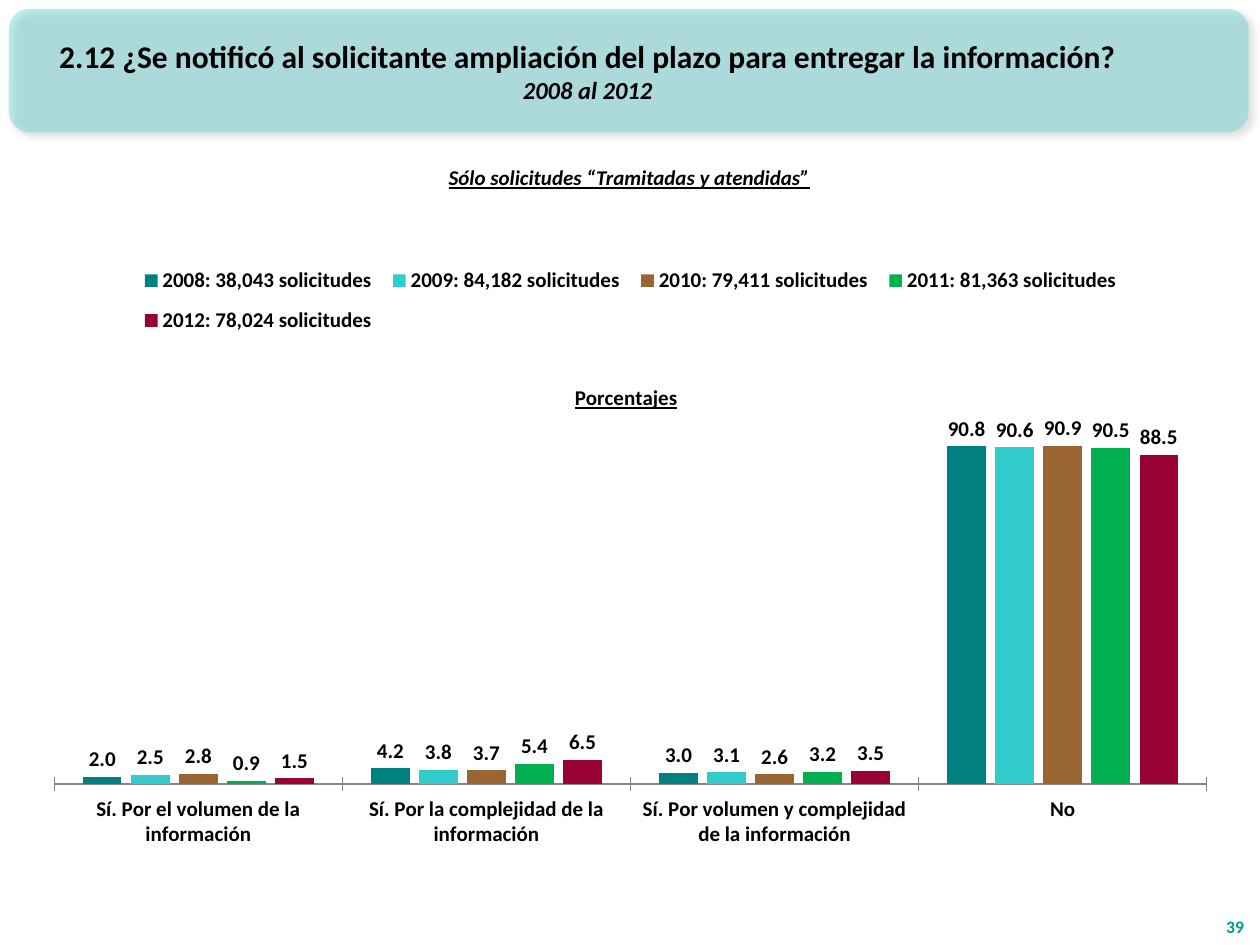
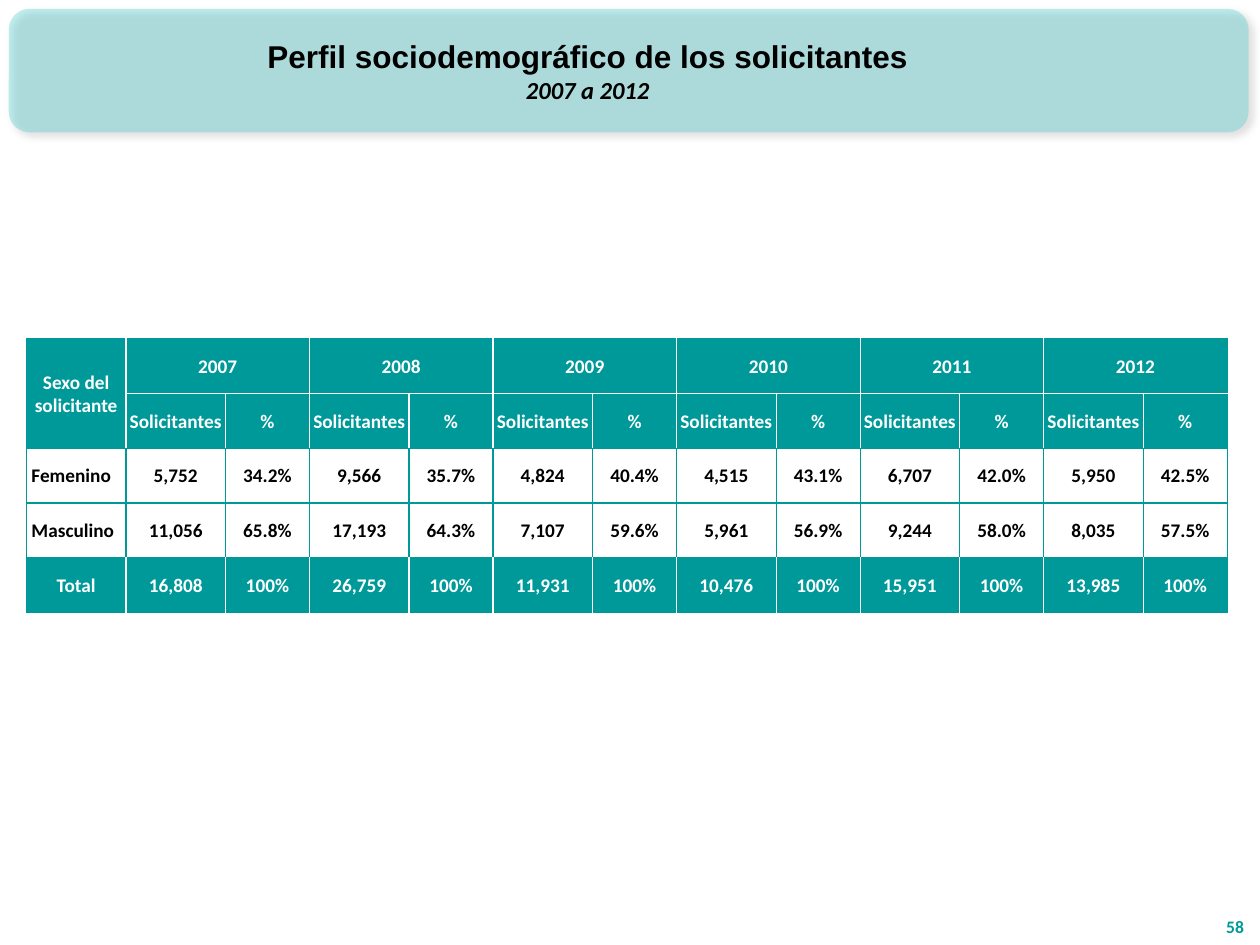
from dataclasses import dataclass
from pptx import Presentation as Deck
from pptx.chart.data import CategoryChartData as Data
from pptx.dml.color import RGBColor as Color
from pptx.enum.chart import XL_CHART_TYPE as Kind, XL_LABEL_POSITION as Spot
from pptx.enum.chart import XL_LEGEND_POSITION as Side, XL_TICK_LABEL_POSITION as Label
from pptx.enum.chart import XL_TICK_MARK as Tick
from pptx.enum.shapes import MSO_SHAPE as Shape
from pptx.enum.text import MSO_ANCHOR as Anchor, MSO_AUTO_SIZE as Fit, PP_ALIGN as Align
from pptx.oxml import parse_xml as make
from pptx.oxml.ns import nsdecls, qn
from pptx.util import Inches, Pt


@dataclass(frozen=True)
class Theme:
    font: str = "Calibri"
    plain: str = "Arial"
    ink: str = "000000"
    white: str = "FFFFFF"
    teal: str = "009999"
    band: str = "33CCCC"
    gray: str = "868686"
    bars: tuple = ("008080", "33CCCC", "996633", "00B050", "990033")
    head: int = 18
    sub: int = 14
    note: int = 12
    cell: int = 11
    foot: int = 10
    rule: float = 0.75


LOOK = Theme()
COLS, ROWS = 100, 75
WIDE, HIGH = Inches(10), Inches(7.5)


def across(n):
    return round(n * WIDE / COLS)


def down(n):
    return round(n * HIGH / ROWS)


def area(x, y, w, h):
    return across(x), down(y), across(w), down(h)


def place(item, index, inner=False, **parts):
    for old in item.findall(qn("c:layout")):
        item.remove(old)
    target = '<c:layoutTarget val="inner"/>' if inner else ""
    modes = "".join(f'<c:{key}Mode val="edge"/>' for key in parts if key in "xy")
    sizes = "".join(f'<c:{key} val="{val}"/>' for key, val in parts.items())
    item.insert(index, make(
        f'<c:layout {nsdecls("c")}><c:manualLayout>{target}{modes}{sizes}'
        '</c:manualLayout></c:layout>'))


class Page:
    def __init__(self, deck, look):
        self.deck, self.look = deck, look
        self.slide = None

    def start(self, title, years, number, face=None):
        self.slide = self.deck.slides.add_slide(self.deck.slide_layouts[5])
        self.band()
        self.title(title, years, face or self.look.font)
        self.text(str(number), (95.7, 70.9, 4, 4), self.look.foot,
                  self.look.teal, Align.RIGHT, Anchor.BOTTOM)

    def style(self, par, size, color=None, align=Align.CENTER, face=None, **marks):
        par.alignment = align
        for run in par.runs:
            font = run.font
            font.name, font.size, font.bold = face or self.look.font, Pt(size), True
            font.color.rgb = Color.from_string(color or self.look.ink)
            for mark, value in marks.items():
                setattr(font, mark, value)

    def band(self):
        band = self.slide.shapes.add_shape(Shape.ROUNDED_RECTANGLE, *area(0.7, 0.7, 98.4, 9.8))
        band.shadow.inherit = False
        band.line.fill.background()
        band.fill.solid()
        band.fill.fore_color.rgb = Color.from_string(self.look.band)
        props = band.element.spPr
        tint = props.find(qn("a:solidFill"))[0]
        tint.append(make(f'<a:alpha {nsdecls("a")} val="30000"/>'))
        props.find(qn("a:effectLst")).append(make(
            f'<a:outerShdw {nsdecls("a")} blurRad="{Pt(4)}" dist="{Pt(3)}" dir="2700000" '
            f'algn="tl" rotWithShape="0"><a:srgbClr val="{self.look.ink}">'
            '<a:alpha val="40000"/></a:srgbClr></a:outerShdw>'))
        self.slide.shapes.element.insert(2, band.element)

    def title(self, title, years, face):
        box = self.slide.shapes.title
        box.left, box.top, box.width, box.height = area(0.8, 0.9, 91.7, 9.4)
        frame = box.text_frame
        frame.text = f"{title}\n{years}"
        frame.auto_size, frame.vertical_anchor = Fit.NONE, Anchor.MIDDLE
        self.style(frame.paragraphs[0], self.look.head, face=face)
        self.style(frame.paragraphs[1], self.look.sub, italic=True)

    def text(self, words, spot, size, color=None, align=Align.CENTER,
             anchor=Anchor.TOP, **marks):
        frame = self.slide.shapes.add_textbox(*area(*spot)).text_frame
        frame.word_wrap, frame.vertical_anchor = True, anchor
        frame.text = words
        self.style(frame.paragraphs[0], size, color, align, **marks)

    def chart(self, title, groups, series, spot):
        data = Data(number_format="0.0")
        data.categories = groups
        for name, values in series.items():
            data.add_series(name, values)
        chart = self.slide.shapes.add_chart(Kind.COLUMN_CLUSTERED, *area(*spot), data).chart
        font = chart.font
        font.name, font.size, font.bold = self.look.font, Pt(self.look.note), True
        font.color.rgb = Color.from_string(self.look.ink)

        chart.has_title = True
        chart.chart_title.text_frame.text = title
        self.style(chart.chart_title.text_frame.paragraphs[0], self.look.note, underline=True)
        chart.has_legend = True
        chart.legend.position = Side.TOP
        chart.legend.include_in_layout = False

        plot = chart.plots[0]
        plot.gap_width, plot.overlap, plot.vary_by_categories = 150, -25, False
        plot.has_data_labels = True
        labels = plot.data_labels
        labels.show_value, labels.position = True, Spot.OUTSIDE_END
        labels.number_format, labels.number_format_is_linked = "0.0", False
        for item, color in zip(plot.series, self.look.bars):
            item.invert_if_negative = False
            item.format.fill.solid()
            item.format.fill.fore_color.rgb = Color.from_string(color)

        base, scale = chart.category_axis, chart.value_axis
        base.major_tick_mark, base.tick_label_position = Tick.CROSS, Label.NEXT_TO_AXIS
        base.format.line.color.rgb = Color.from_string(self.look.gray)
        scale.minimum_scale, scale.maximum_scale = 0, 100
        scale.has_major_gridlines = scale.visible = False

        root = chart.element.find(qn("c:chart"))
        place(root.find(qn("c:title")), 1, x=0.45, y=0.23)
        place(root.find(qn("c:legend")), 1, x=0.08, y=0.03, w=0.84, h=0.15)
        place(root.find(qn("c:plotArea")), 0, True, x=0.016, y=0.282, w=0.968, h=0.589)

    def edges(self, cell, colors):
        props = cell._tc.get_or_add_tcPr()
        for index, (side, color) in enumerate(zip("LRTB", colors)):
            props.insert(index, make(
                f'<a:ln{side} {nsdecls("a")} w="{Pt(self.look.rule)}"><a:solidFill>'
                f'<a:srgbClr val="{color}"/></a:solidFill></a:ln{side}>'))

    def table(self, rows, spot, widths, height):
        grid = self.slide.shapes.add_table(len(rows), len(widths), *area(*spot)).table
        grid.first_row = grid.horz_banding = False
        for col, width in zip(grid.columns, widths):
            col.width = across(width)
        for row in grid.rows:
            row.height = down(height)
        grid.cell(0, 0).merge(grid.cell(1, 0))
        for c in range(1, len(widths), 2):
            grid.cell(0, c).merge(grid.cell(0, c + 1))
        for r, row in enumerate(rows):
            for c, words in enumerate(row):
                self.cell(grid.cell(r, c), words, r, c, len(rows), len(widths))

    def cell(self, cell, words, r, c, high, wide):
        look = self.look
        dark = r < 2 or r == high - 1
        name = c == 0 and not dark
        cell.vertical_anchor = Anchor.MIDDLE
        cell.margin_left = Inches(0.04 if name else 0.01)
        cell.margin_right = cell.margin_top = Inches(0.01)
        cell.margin_bottom = 0
        cell.text = words
        self.style(cell.text_frame.paragraphs[0], look.cell,
                   look.white if dark else look.ink, Align.LEFT if name else Align.CENTER)
        if dark:
            cell.fill.solid()
            cell.fill.fore_color.rgb = Color.from_string(look.teal)
        else:
            cell.fill.background()
        light = (dark and c > 0, dark and c + cell.span_width < wide,
                 r == 1 and c > 0, r == 0 and c > 0)
        self.edges(cell, [look.white if on else look.teal for on in light])


def main():
    deck = Deck()
    deck.slide_width, deck.slide_height = WIDE, HIGH
    page = Page(deck, LOOK)

    page.start("2.12 ¿Se notificó al solicitante ampliación del plazo para entregar la información?",
               "2008 al 2012", 39)
    page.text("Sólo solicitudes “Tramitadas y atendidas”", (23.1, 12.6, 53.7, 3),
              LOOK.note, italic=True, underline=True)
    page.chart("Porcentajes",
               ["Sí. Por el volumen de la información",
                "Sí. Por la complejidad de la información",
                "Sí. Por volumen y complejidad de la información", "No"],
               {"2008: 38,043 solicitudes": (2.0, 4.2, 3.0, 90.8),
                "2009: 84,182 solicitudes": (2.5, 3.8, 3.1, 90.6),
                "2010: 79,411 solicitudes": (2.8, 3.7, 2.6, 90.9),
                "2011: 81,363 solicitudes": (0.9, 5.4, 3.2, 90.5),
                "2012: 78,024 solicitudes": (1.5, 6.5, 3.5, 88.5)},
               (2.8, 18.6, 94.5, 50.1))

    page.start("Perfil sociodemográfico de los solicitantes", "2007 a 2012", 58, LOOK.plain)
    years = [text for year in range(2007, 2013) for text in (str(year), "")]
    page.table([["Sexo del solicitante", *years],
                ["", *["Solicitantes", "%"] * 6],
                ["Femenino", "5,752", "34.2%", "9,566", "35.7%", "4,824", "40.4%",
                 "4,515", "43.1%", "6,707", "42.0%", "5,950", "42.5%"],
                ["Masculino", "11,056", "65.8%", "17,193", "64.3%", "7,107", "59.6%",
                 "5,961", "56.9%", "9,244", "58.0%", "8,035", "57.5%"],
                ["Total", "16,808", "100%", "26,759", "100%", "11,931", "100%",
                 "10,476", "100%", "15,951", "100%", "13,985", "100%"]],
               (2.1, 26.9, 95.3, 21.7), [7.9] + [7.9, 6.67] * 6, 4.34)
    deck.save("out.pptx")


if __name__ == "__main__":
    main()
